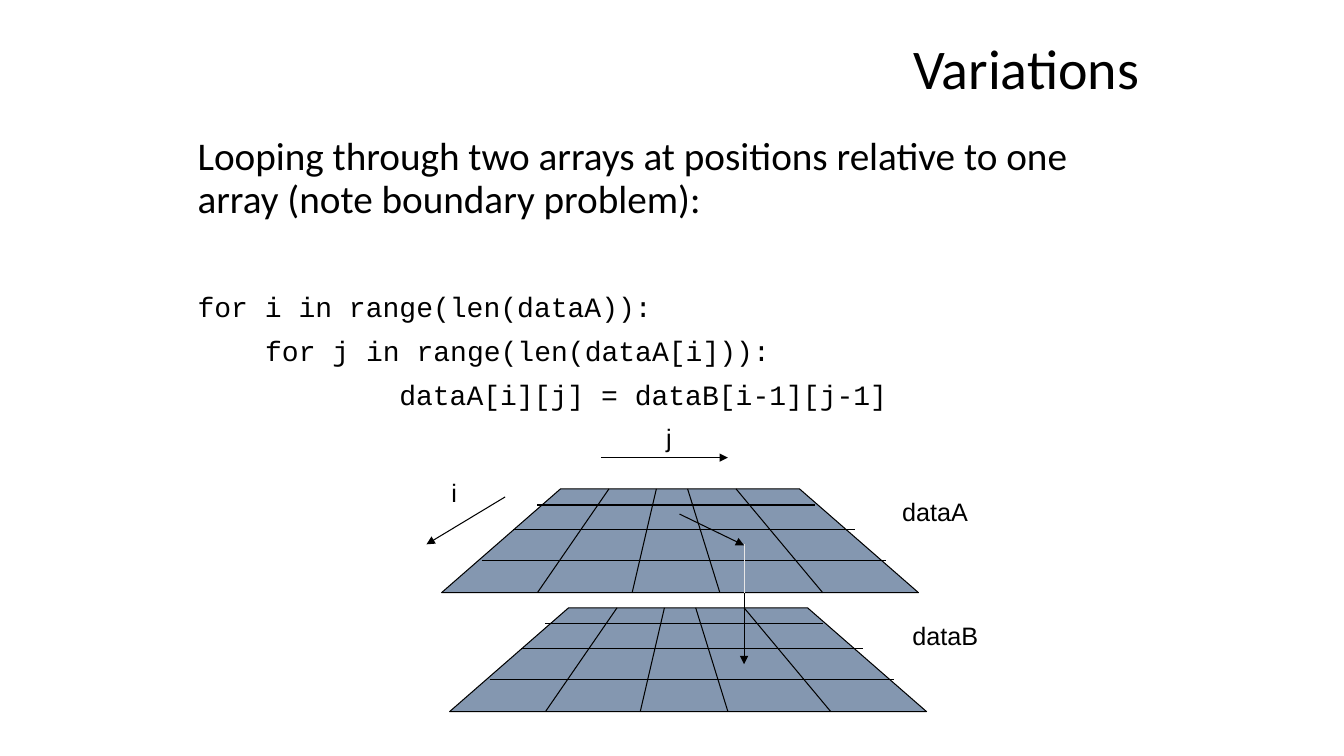
"""Build a slide on looping through two arrays at relative positions."""
from dataclasses import dataclass

from lxml.etree import SubElement
from pptx import Presentation
from pptx.dml.color import RGBColor as Rgb
from pptx.enum.shapes import MSO_CONNECTOR as Link
from pptx.enum.text import MSO_ANCHOR as Anchor, MSO_AUTO_SIZE as Fit, PP_ALIGN as Align
from pptx.oxml.ns import qn
from pptx.util import Pt

SCALE = 9144
BLACK = "000000"
STEEL = "8497B0"
PALE = "E7E6E6"


@dataclass
class Line:
    x1: int
    y1: int
    x2: int
    y2: int
    color: str = BLACK
    arrow: bool = False


@dataclass
class Label:
    text: str
    x: int
    y: int
    width: int


@dataclass
class Para:
    text: str
    font: str
    size: int
    before: int = 10
    indent: int = 0


@dataclass
class Plane:
    x: int
    y: int


EDGE = [(0, 103), (118, 0), (355, 0), (473, 103)]
GRID = [
    Line(95, 103, 166, 0),
    Line(189, 103, 213, 0),
    Line(276, 103, 244, 0),
    Line(378, 103, 292, 0),
    Line(95, 16, 370, 16),
    Line(71, 40, 410, 40),
    Line(40, 71, 441, 71),
]
PLANES = [Plane(438, 485), Plane(446, 603)]
ARROWS = [
    Line(596, 454, 722, 454, arrow=True),
    Line(501, 493, 423, 540, arrow=True),
    Line(738, 588, 738, 659, arrow=True),
    Line(738, 588, 738, 540, color=PALE),
    Line(674, 510, 738, 541, arrow=True),
]
LABELS = [
    Label("j", 651, 414, 26),
    Label("i", 438, 469, 26),
    Label("dataA", 885, 487, 86),
    Label("dataB", 895, 611, 86),
]
CODE = "Courier New"
PARAS = [
    Para("Looping through two arrays at positions relative to one array "
         "(note boundary problem):", "Calibri", 28),
    Para("for i in range(len(dataA)):", CODE, 20, before=51),
    Para("for j in range(len(dataA[i])):", CODE, 20, indent=67),
    Para("dataA[i][j] = dataB[i-1][j-1]", CODE, 20, indent=200),
]


def px(n: int) -> int:
    return n * SCALE


def rgb(code: str) -> Rgb:
    return Rgb.from_string(code)


def place(shape, x: int, y: int, width: int, height: int) -> None:
    shape.left, shape.top = px(x), px(y)
    shape.width, shape.height = px(width), px(height)


def style(para, font: str, size: int) -> None:
    for run in para.runs:
        run.font.name = font
        run.font.size = Pt(size)
        run.font.color.rgb = rgb(BLACK)


def draw_line(slide, line: Line, dx: int = 0, dy: int = 0) -> None:
    link = slide.shapes.add_connector(
        Link.STRAIGHT, px(line.x1 + dx), px(line.y1 + dy),
        px(line.x2 + dx), px(line.y2 + dy))
    link.line.color.rgb = rgb(line.color)
    link.line.width = Pt(0.75)
    if line.arrow:
        SubElement(link.line._get_or_add_ln(), qn("a:tailEnd"), type="triangle")
    SubElement(link._element.spPr, qn("a:effectLst"))


def draw_plane(slide, plane: Plane) -> None:
    edge = [(plane.x + x, plane.y + y) for x, y in EDGE]
    pen = slide.shapes.build_freeform(*edge[0], scale=SCALE)
    pen.add_line_segments(edge[1:], close=True)
    shape = pen.convert_to_shape()
    shape.shadow.inherit = False
    shape.fill.solid()
    shape.fill.fore_color.rgb = rgb(STEEL)
    shape.line.color.rgb = rgb(BLACK)
    shape.line.width = Pt(0.75)
    for line in GRID:
        draw_line(slide, line, plane.x, plane.y)


def draw_label(slide, label: Label) -> None:
    box = slide.shapes.add_textbox(
        px(label.x), px(label.y), px(label.width), px(40))
    frame = box.text_frame
    frame.text = label.text
    frame.word_wrap = False
    frame.auto_size = Fit.SHAPE_TO_FIT_TEXT
    style(frame.paragraphs[0], "Arial", 18)


def fill_title(title) -> None:
    place(title, 210, 28, 930, 85)
    frame = title.text_frame
    frame.text = "Variations"
    frame.auto_size = Fit.NONE
    frame.vertical_anchor = Anchor.MIDDLE
    para = frame.paragraphs[0]
    para.alignment = Align.RIGHT
    para.line_spacing = 0.9
    style(para, "Calibri", 40)


def fill_body(body) -> None:
    place(body, 186, 131, 961, 598)
    frame = body.text_frame
    frame.text = "\n".join(item.text for item in PARAS)
    frame.auto_size = Fit.NONE
    for para, item in zip(frame.paragraphs, PARAS):
        para.line_spacing = 0.9
        para.space_before = Pt(item.before)
        props = para._p.get_or_add_pPr()
        props.set("marL", str(px(item.indent)))
        props.set("indent", "0")
        SubElement(props, qn("a:buNone"))
        style(para, item.font, item.size)


def main() -> None:
    deck = Presentation()
    deck.slide_width, deck.slide_height = px(1333), px(750)
    slide = deck.slides.add_slide(deck.slide_layouts[1])
    fill_title(slide.shapes.title)
    fill_body(slide.placeholders[1])
    for plane in PLANES:
        draw_plane(slide, plane)
    for line in ARROWS:
        draw_line(slide, line)
    for label in LABELS:
        draw_label(slide, label)
    deck.save("out.pptx")


if __name__ == "__main__":
    main()
